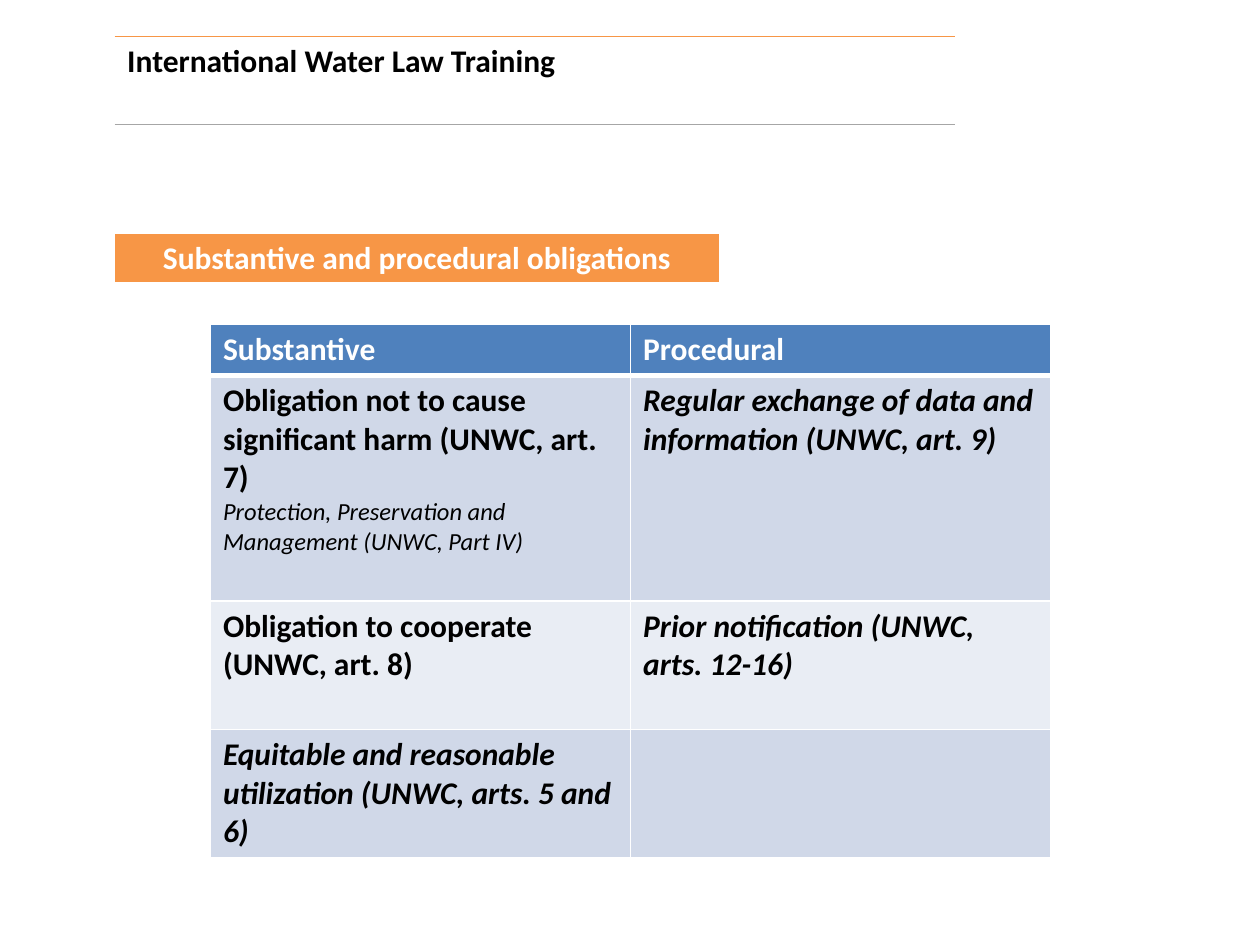
from typing import NamedTuple, Optional

from lxml import etree
from pptx import Presentation
from pptx.dml.color import RGBColor
from pptx.enum.text import PP_ALIGN
from pptx.oxml.ns import qn
from pptx.util import Inches, Pt

LEFT = PP_ALIGN.LEFT
CENTER = PP_ALIGN.CENTER

BLACK = RGBColor(0x00, 0x00, 0x00)
WHITE = RGBColor(0xFF, 0xFF, 0xFF)
ORANGE = RGBColor(0xF7, 0x96, 0x46)
GRAY = RGBColor(0xA6, 0xA6, 0xA6)
BLUE = RGBColor(0x4F, 0x81, 0xBD)
BAND_DARK = RGBColor(0xD0, 0xD8, 0xE8)
BAND_LIGHT = RGBColor(0xE9, 0xED, 0xF4)
FONT = "Calibri"


class Line(NamedTuple):
    text: str
    color: RGBColor = BLACK
    size: int = 18
    bold: bool = True
    italic: bool = False


class Border(NamedTuple):
    color: RGBColor
    width: float


class Borders(NamedTuple):
    left: Optional[Border] = None
    right: Optional[Border] = None
    top: Optional[Border] = None
    bottom: Optional[Border] = None


class Row(NamedTuple):
    height: float
    cells: list[list[Line]]
    fill: Optional[RGBColor]
    borders: Borders


THIN = Border(WHITE, 1)
THICK = Border(WHITE, 3)
GRID = Borders(THIN, THIN, THIN, THIN)
HEADING = GRID._replace(bottom=THICK)
BELOW_HEADING = GRID._replace(top=THICK)

TITLE_ROWS = [
    Row(0.7, [[Line("International Water Law Training")]], None,
        Borders(top=Border(ORANGE, 1), bottom=Border(GRAY, 0.75))),
]

BANNER_ROWS = [
    Row(0.4, [[Line("Substantive and procedural obligations", WHITE)]],
        ORANGE, HEADING),
]

OBLIGATION_ROWS = [
    Row(0.41, [[Line("Substantive", WHITE)], [Line("Procedural", WHITE)]],
        BLUE, HEADING),
    Row(1.79, [
        [Line("Obligation not to cause significant harm (UNWC, art. 7)"),
         Line("Protection, Preservation and Management (UNWC, Part IV)",
              size=14, bold=False, italic=True)],
        [Line("Regular exchange of data and information (UNWC, art. 9)",
              italic=True)],
    ], BAND_DARK, BELOW_HEADING),
    Row(1.02, [
        [Line("Obligation to cooperate (UNWC, art. 8)")],
        [Line("Prior notification (UNWC, arts. 12-16)", italic=True)],
    ], BAND_LIGHT, GRID),
    Row(1.01, [
        [Line("Equitable and reasonable utilization (UNWC, arts. 5 and 6)",
              italic=True)],
        [],
    ], BAND_DARK, GRID),
]


def set_borders(cell, borders: Borders) -> None:
    properties = cell._tc.get_or_add_tcPr()
    for tag, border in zip(("a:lnL", "a:lnR", "a:lnT", "a:lnB"), borders):
        line = etree.SubElement(properties, qn(tag))
        if border is None:
            line.set("w", "0")
            etree.SubElement(line, qn("a:noFill"))
        else:
            line.set("w", str(int(Pt(border.width))))
            solid = etree.SubElement(line, qn("a:solidFill"))
            etree.SubElement(solid, qn("a:srgbClr"), val=str(border.color))


def fill_cell(cell, lines: list[Line], row: Row, align) -> None:
    # Borders come before the fill in the cell properties
    set_borders(cell, row.borders)
    if row.fill is None:
        cell.fill.background()
    else:
        cell.fill.solid()
        cell.fill.fore_color.rgb = row.fill
    frame = cell.text_frame
    for index, line in enumerate(lines):
        para = frame.add_paragraph() if index else frame.paragraphs[0]
        para.alignment = align
        span = para.add_run()
        span.text = line.text
        font = span.font
        font.name = FONT
        font.size = Pt(line.size)
        font.bold = line.bold
        font.italic = line.italic
        font.color.rgb = line.color


def draw_table(page, left: float, top: float, width: float,
               rows: list[Row], align=LEFT) -> None:
    height = sum(row.height for row in rows)
    table = page.shapes.add_table(
        len(rows), len(rows[0].cells),
        Inches(left), Inches(top), Inches(width), Inches(height)).table
    table.first_row = False
    table.horz_banding = False
    for row_index, row in enumerate(rows):
        table.rows[row_index].height = Inches(row.height)
        for column_index, lines in enumerate(row.cells):
            fill_cell(table.cell(row_index, column_index), lines, row, align)


def main() -> None:
    deck = Presentation()
    deck.slide_width = Inches(10)
    deck.slide_height = Inches(7.5)
    page = deck.slides.add_slide(deck.slide_layouts[6])

    # Title between two rules
    draw_table(page, 0.91, 0.29, 6.67, TITLE_ROWS)
    # Section banner
    draw_table(page, 0.91, 1.85, 4.8, BANNER_ROWS, CENTER)
    # Obligations side by side
    draw_table(page, 1.67, 2.57, 6.67, OBLIGATION_ROWS)

    deck.save("out.pptx")


if __name__ == "__main__":
    main()
